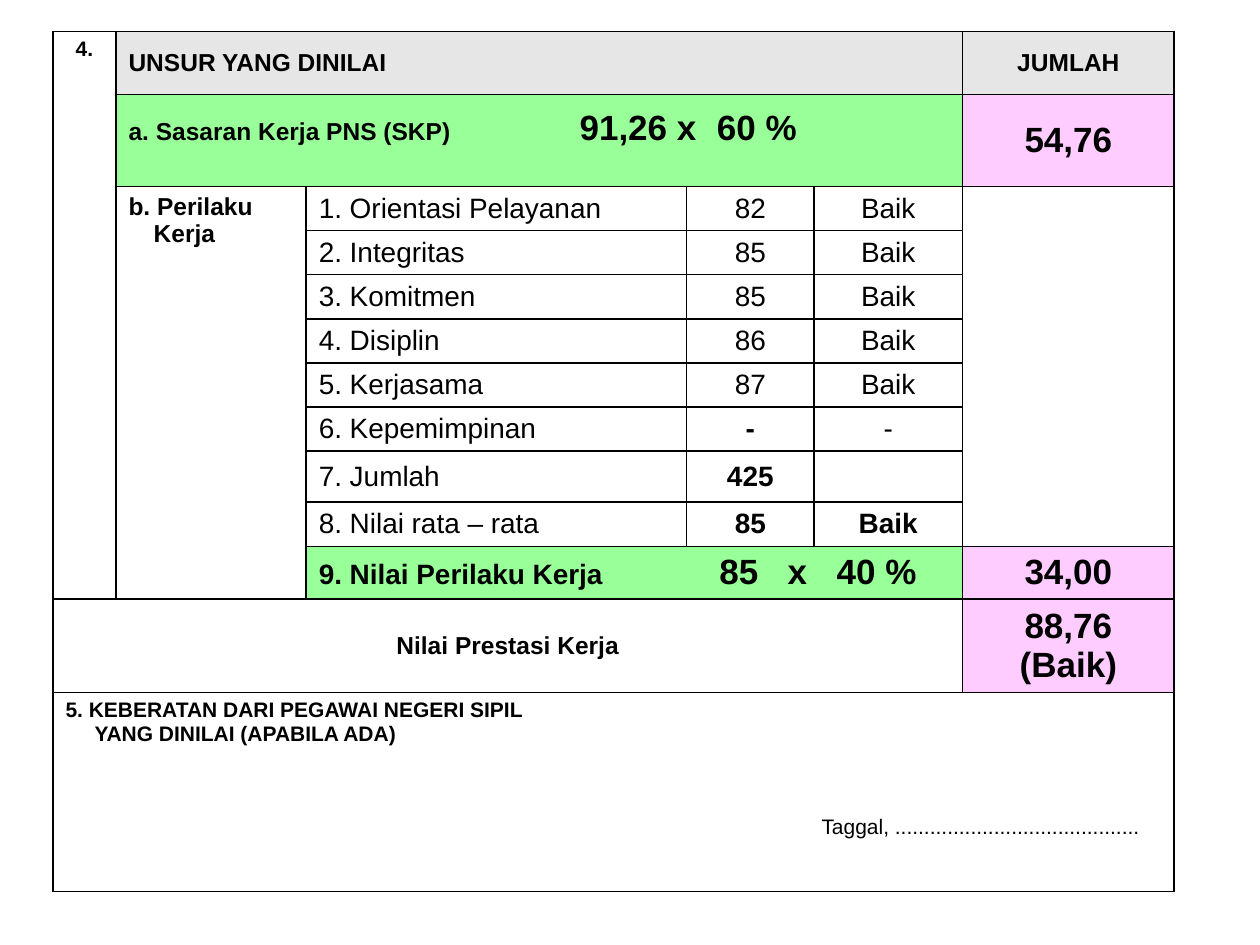
import pptx
import pptx.util
import pptx.dml.color
import pptx.enum.text
import lxml.etree
from dataclasses import dataclass
from pptx.util import Inches, Pt

ALIGN = pptx.enum.text.PP_ALIGN
ANCHOR = pptx.enum.text.MSO_ANCHOR
NS = "http://schemas.openxmlformats.org/drawingml/2006/main"


@dataclass(frozen=True)
class Theme:
    font: str = "Arial"
    ink: str = "000000"
    gray: str = "E6E6E6"
    green: str = "99FF99"
    pink: str = "FFCCFF"
    note: int = 12
    head: int = 14
    body: int = 16
    big: int = 20
    line: int = 1


THEME = Theme()
COLS = [0.5, 1.51, 3.02, 1.01, 1.18, 1.68]
ROWS = [0.5, 0.73] + [0.35] * 8 + [0.42, 0.74, 1.58]
TRAITS = [
    ("1. Orientasi Pelayanan", "82", "Baik"),
    ("2. Integritas", "85", "Baik"),
    ("3. Komitmen", "85", "Baik"),
    ("4. Disiplin", "86", "Baik"),
    ("5. Kerjasama", "87", "Baik"),
    ("6. Kepemimpinan", "-", "-"),
    ("7. Jumlah", "425", ""),
    ("8. Nilai rata – rata", "85", "Baik"),
]


def color(code):
    return pptx.dml.color.RGBColor.from_string(code)


def sub(node, tag, **attrs):
    return lxml.etree.SubElement(node, f"{{{NS}}}{tag}", attrs)


def style(run, size, bold):
    run.font.name = THEME.font
    run.font.size = Pt(size)
    run.font.bold = bold
    run.font.color.rgb = color(THEME.ink)


def write(cell, text, size, bold=True, align=ALIGN.LEFT, anchor=ANCHOR.MIDDLE, fill=None):
    cell.text_frame.text = text
    cell.vertical_anchor = anchor
    for para in cell.text_frame.paragraphs:
        para.alignment = align
        for run in para.runs:
            style(run, size, bold)
    if fill:
        cell.fill.solid()
        cell.fill.fore_color.rgb = color(fill)


def stops(para, *places):
    """Set left tab stops, in inches from the start of the text."""
    tabs = sub(para._p.get_or_add_pPr(), "tabLst")
    for place in places:
        sub(tabs, "tab", pos=str(Inches(place)), algn="l")


def score(cell, label, size, parts, places):
    """Write a label, then larger parts of a sum at tab stops."""
    write(cell, label, size, fill=THEME.green)
    para = cell.text_frame.paragraphs[0]
    stops(para, *places)
    run = para.add_run()
    run.text = "".join("\t" + part for part in parts)
    style(run, THEME.big, True)


def grid(slide, left, top):
    """Add the empty ruled table."""
    frame = slide.shapes.add_table(len(ROWS), len(COLS), Inches(left), Inches(top),
                                   Inches(sum(COLS)), Inches(sum(ROWS)))
    table = frame.table
    table.first_row = table.horz_banding = False
    for col, width in zip(table.columns, COLS):
        col.width = Inches(width)
    for row, height in zip(table.rows, ROWS):
        row.height = Inches(height)
    for cell in table.iter_cells():
        props = cell._tc.get_or_add_tcPr()
        for side in ("lnL", "lnR", "lnT", "lnB"):
            line = sub(props, side, w=str(Pt(THEME.line)))
            sub(sub(line, "solidFill"), "srgbClr", val=THEME.ink)
        cell.fill.background()
        end = cell.text_frame.paragraphs[0]._p.get_or_add_endParaRPr()
        end.set("sz", str(THEME.note * 100))
    return table


def join(table, row, col, rows, cols):
    cell = table.cell(row, col)
    cell.merge(table.cell(row + rows - 1, col + cols - 1))
    return cell


def header(table):
    write(join(table, 0, 0, 11, 1), "4.", THEME.note, align=ALIGN.CENTER, anchor=ANCHOR.TOP)
    write(join(table, 0, 1, 1, 4), "UNSUR YANG DINILAI", THEME.head, fill=THEME.gray)
    write(table.cell(0, 5), "JUMLAH", THEME.head, align=ALIGN.CENTER, fill=THEME.gray)


def target(table):
    cell = join(table, 1, 1, 1, 4)
    score(cell, "a. Sasaran Kerja PNS (SKP)", THEME.head, ["91,26 x", "60 %"], [3.58, 4.67])
    cell.margin_bottom = Inches(0.25)
    write(table.cell(1, 5), "54,76", THEME.big, align=ALIGN.CENTER, fill=THEME.pink)


def conduct(table):
    cell = join(table, 2, 1, 9, 1)
    write(cell, "b. Perilaku Kerja", THEME.head, anchor=ANCHOR.TOP)
    props = cell.text_frame.paragraphs[0]._p.get_or_add_pPr()
    props.set("marL", str(Inches(0.2)))
    props.set("indent", str(Inches(-0.2)))
    join(table, 2, 5, 8, 1)
    for row, (name, mark, grade) in enumerate(TRAITS, 2):
        write(table.cell(row, 2), name, THEME.body, bold=False)
        write(table.cell(row, 3), mark, THEME.body, bold=row > 6, align=ALIGN.CENTER)
        write(table.cell(row, 4), grade, THEME.body, bold=row > 7, align=ALIGN.CENTER)
    score(join(table, 10, 2, 1, 3), "9. Nilai Perilaku Kerja", THEME.body,
          ["85", "x", "40 %"], [3.18, 3.72, 4.11])
    write(table.cell(10, 5), "34,00", THEME.big, align=ALIGN.CENTER, fill=THEME.pink)


def total(table):
    write(join(table, 11, 0, 1, 5), "Nilai Prestasi Kerja", THEME.head, align=ALIGN.CENTER)
    write(table.cell(11, 5), "88,76\n(Baik)", THEME.big, align=ALIGN.CENTER, fill=THEME.pink)


def appeal(table):
    cell = join(table, 12, 0, 1, 6)
    lines = ["5. KEBERATAN DARI PEGAWAI NEGERI SIPIL", "YANG DINILAI (APABILA ADA)",
             "Taggal, " + "." * 42]
    write(cell, "\n".join(lines), THEME.note, anchor=ANCHOR.TOP)
    paras = cell.text_frame.paragraphs
    for para, indent in zip(paras, (0, 0.23, 6)):
        para._p.get_or_add_pPr().set("marL", str(Inches(indent)))
    paras[2].space_before = Pt(40)
    paras[2].runs[0].font.bold = False


def main():
    deck = pptx.Presentation()
    deck.slide_width, deck.slide_height = Inches(10), Inches(7.5)
    slide = deck.slides.add_slide(deck.slide_layouts[6])
    table = grid(slide, 0.42, 0.25)
    for fill in (header, target, conduct, total, appeal):
        fill(table)
    deck.save("out.pptx")


if __name__ == "__main__":
    main()
